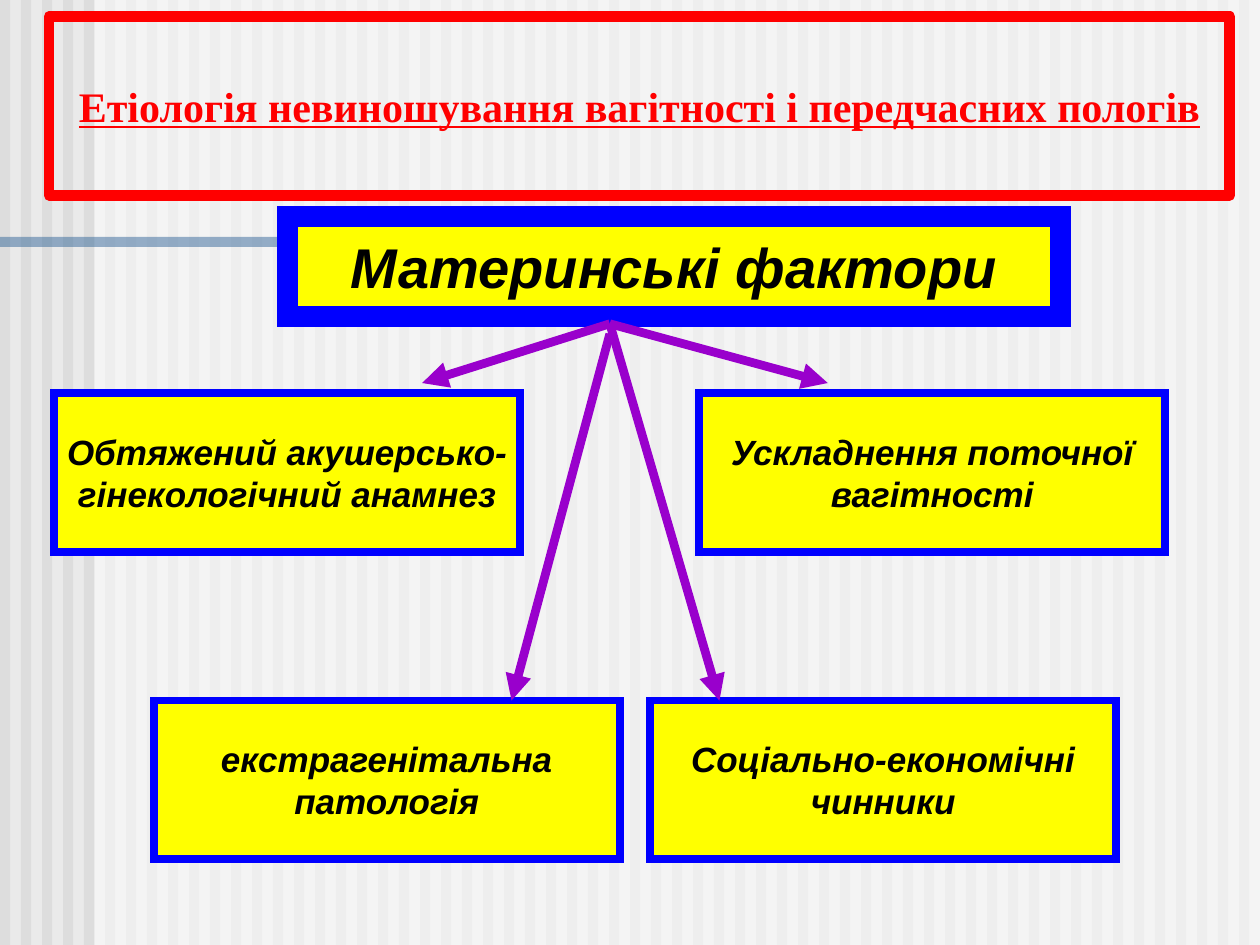
from lxml import etree
from pptx import Presentation
from pptx import oxml
from pptx import util as u
from pptx.dml.color import RGBColor
from pptx.enum import shapes, text
from pptx.oxml import ns

COLORS = {
    "back": "EAEAEA",
    "stripe": "DDDDDD",
    "veil": "FFFFFF",
    "bar": "336699",
    "box": "FFFF00",
    "edge": "0000FF",
    "arrow": "9900CC",
    "title": "FF0000",
    "text": "000000",
}


def color(name):
    return RGBColor.from_string(COLORS[name])


def add_tag(parent, tag, **attrs):
    return etree.SubElement(parent, ns.qn(tag), attrs)


def set_line(line, name, width):
    line.color.rgb = color(name)
    line.width = u.Pt(width)
    return line.color.rgb and line.fill


def write(shape, words, size=20, font="Arial", tint="text", **style):
    frame = shape.text_frame
    frame.word_wrap = True
    frame.auto_size = text.MSO_AUTO_SIZE.NONE
    frame.vertical_anchor = text.MSO_ANCHOR.MIDDLE
    para = frame.paragraphs[0]
    para.alignment = text.PP_ALIGN.CENTER
    run = para.add_run()
    run.text = words
    run.font.size = u.Pt(size)
    run.font.name = font
    run.font.color.rgb = color(tint)
    for key, value in style.items():
        setattr(run.font, key, value)


def add_rect(group, place, fill, alpha=None):
    rect = group.add_shape(shapes.MSO_SHAPE.RECTANGLE, *map(u.Inches, place))
    rect.shadow.inherit = False
    rect.fill.solid()
    rect.fill.fore_color.rgb = color(fill)
    rect.line.fill.background()
    if alpha:
        tone = rect.element.spPr.find(".//" + ns.qn("a:srgbClr"))
        add_tag(tone, "a:alpha", val=str(alpha * 1000))
    return rect


def add_box(slide, place, words, size=20, width=4.5):
    box = add_rect(slide.shapes, place, "box")
    set_line(box.line, "edge", width)
    add_tag(box.element.spPr.find(ns.qn("a:ln")), "a:miter", lim="800000")
    write(box, words, size=size, bold=True, italic=True)


def add_arrow(slide, start, end):
    ends = map(u.Inches, (*start, *end))
    arrow = slide.shapes.add_connector(shapes.MSO_CONNECTOR.STRAIGHT, *ends)
    set_line(arrow.line, "arrow", 5)
    props = arrow.element.spPr
    add_tag(props.find(ns.qn("a:ln")), "a:tailEnd", type="triangle")
    add_tag(props, "a:effectLst")


def add_back(slide):
    fill = slide.background.fill
    fill.solid()
    fill.fore_color.rgb = color("back")
    group = slide.shapes.add_group_shape().shapes
    for step in range(60):
        add_rect(group, (step / 6, 0, 0.08, 7.5), "stripe")
    add_rect(group, (0.75, 0, 9.25, 7.5), "veil", alpha=50)
    add_rect(group, (0, 1.88, 7.6, 0.08), "bar", alpha=50)


def add_title(slide, words):
    title = slide.shapes.title
    title.left, title.top = u.Inches(0.39), u.Inches(0.13)
    title.width, title.height = u.Inches(9.37), u.Inches(1.42)
    set_line(title.line, "title", 6)
    add_tag(title.element.spPr.find(ns.qn("a:ln")), "a:round")
    write(title, words, size=24, font="Times New Roman", tint="title",
          bold=True, underline=True)
    title.element.getparent().append(title.element)


def main():
    prs = Presentation()
    prs.slide_width, prs.slide_height = u.Inches(10), u.Inches(7.5)
    slide = prs.slides.add_slide(prs.slide_layouts[5])
    add_back(slide)
    add_box(slide, (2.28, 1.72, 6.14, 0.79), "Материнські фактори",
            size=32, width=12)
    factors = [
        (0.43, 3.12, "Обтяжений акушерсько-гінекологічний анамнез"),
        (5.55, 3.12, "Ускладнення поточної вагітності"),
        (1.22, 5.56, "екстрагенітальна патологія"),
        (5.16, 5.56, "Соціально-економічні чинники"),
    ]
    for left, top, words in factors:
        add_box(slide, (left, top, 3.7, 1.26), words)
    arrows = [
        (2.57, (3.35, 3.04)),
        (2.57, (6.57, 3.04)),
        (2.65, (4.06, 5.56)),
        (2.57, (5.71, 5.56)),
    ]
    for top, end in arrows:
        add_arrow(slide, (4.84, top), end)
    add_title(slide, "Етіологія невиношування вагітності і передчасних пологів")
    prs.save("out.pptx")


if __name__ == "__main__":
    main()
